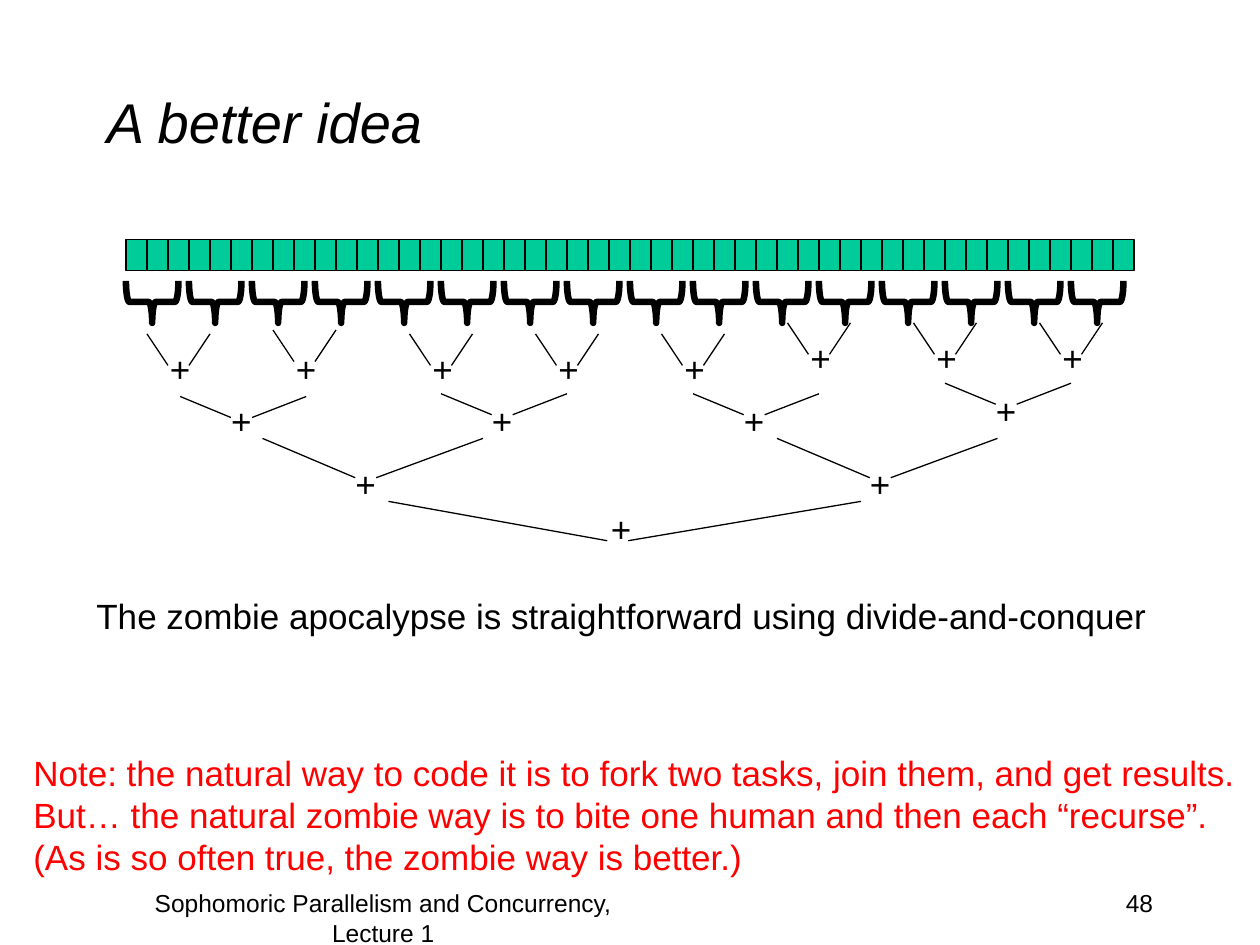
"""Build a slide showing a divide-and-conquer sum over an array."""
from lxml import etree
from pptx import Presentation
from pptx import util as u
from pptx.dml.color import RGBColor
from pptx.enum import shapes, text
from pptx.oxml import ns

Pt = u.Pt
COLORS = {"ink": "000000", "cell": "00CC99", "note": "FF0000"}
FONT = "Arial"
LEFT, CENTER, RIGHT = text.PP_ALIGN.LEFT, text.PP_ALIGN.CENTER, text.PP_ALIGN.RIGHT

TITLE = "A better idea"
BODY = "The zombie apocalypse is straightforward using divide-and-conquer"
FOOTER = "Sophomoric Parallelism and Concurrency, Lecture 1"
NUMBER = "48"
NOTE = (
    "Note: the natural way to code it is to fork two tasks, join them, and get results."
    "\vBut… the natural zombie way is to bite one human and then each “recurse”."
    "\n(As is so often true, the zombie way is better.)"
)

CELL_COUNT, BRACE_COUNT = 48, 16
CELL_LEFT, CELL_TOP, CELL_WIDTH, CELL_HEIGHT = 72, 136.8, 12, 18
BRACE_LEFT, BRACE_TOP, BRACE_WIDTH, BRACE_HEIGHT = 75, 157.5, 24, 30
BRACE_STEP = 3 * CELL_WIDTH
FOOT_GAP = 12
PLUS_WIDTH, PLUS_HEIGHT = 26, 31.5

LEVELS = [
    {"span": 36, "foot": 12, "rise": 18, "plus": 6, "joins": [
        (84, 190.8, 195), (156, 188.6, 195), (234, 190.8, 195), (306, 190.8, 195),
        (378, 190.8, 195), (450, 184.5, 188.6), (522, 184.5, 188.6), (594, 184.5, 188.6)]},
    {"span": 72, "foot": 29, "rise": 12, "plus": 22, "joins": [
        (103, 226.6, 225), (252, 225, 225), (396, 225, 225), (540, 219, 219)]},
    {"span": 126, "foot": 53, "rise": 22.5, "plus": 46, "joins": [
        (150, 250.5, 261), (444, 250.5, 261)]},
    {"span": 270, "foot": 125, "rise": 22.5, "plus": 120, "joins": [(222, 286.5, 286.5)]},
]


def color(name):
    return RGBColor.from_string(COLORS[name])


def add_text(page, words, left, top, width, height, size=20, ink="ink",
             align=LEFT, wrap=True, italic=False, middle=False):
    box = page.shapes.add_textbox(Pt(left), Pt(top), Pt(width), Pt(height))
    frame = box.text_frame
    frame.text = words
    frame.word_wrap = wrap
    frame.vertical_anchor = text.MSO_ANCHOR.MIDDLE if middle else text.MSO_ANCHOR.TOP
    for para in frame.paragraphs:
        para.alignment = align
        for span in para.runs:
            span.font.name, span.font.size = FONT, Pt(size)
            span.font.italic = italic
            span.font.color.rgb = color(ink)
    return box


def add_outline(page, kind, left, top, width, height, weight):
    shape = page.shapes.add_shape(kind, Pt(left), Pt(top), Pt(width), Pt(height))
    shape.shadow.inherit = False
    shape.fill.background()
    shape.line.color.rgb = color("ink")
    shape.line.width = Pt(weight)
    return shape


def add_line(page, x1, y1, x2, y2):
    line = page.shapes.add_connector(
        shapes.MSO_CONNECTOR.STRAIGHT, Pt(x1), Pt(y1), Pt(x2), Pt(y2))
    line.line.color.rgb = color("ink")
    line.line.width = Pt(0.75)
    etree.SubElement(line._element.spPr, ns.qn("a:effectLst"))


def add_array(page):
    for index in range(CELL_COUNT):
        cell = add_outline(page, shapes.MSO_SHAPE.RECTANGLE, CELL_LEFT + index * CELL_WIDTH,
                           CELL_TOP, CELL_WIDTH, CELL_HEIGHT, 0.75)
        cell.fill.solid()
        cell.fill.fore_color.rgb = color("cell")
    for index in range(BRACE_COUNT):
        brace = add_outline(page, shapes.MSO_SHAPE.LEFT_BRACE, BRACE_LEFT + index * BRACE_STEP,
                            BRACE_TOP, BRACE_WIDTH, BRACE_HEIGHT, 3.75)
        brace.rotation = 270


def add_tree(page):
    for level in LEVELS:
        for left, top, plus_top in level["joins"]:
            foot, bottom = left + level["foot"], top + level["rise"]
            add_line(page, left, top, foot, bottom)
            add_line(page, left + level["span"], top, foot + FOOT_GAP, bottom)
            add_text(page, "+", left + level["plus"], plus_top,
                     PLUS_WIDTH, PLUS_HEIGHT, wrap=False)


def main():
    deck = Presentation()
    deck.slide_width, deck.slide_height = Pt(720), Pt(540)
    page = deck.slides.add_slide(deck.slide_layouts[6])
    add_text(page, TITLE, 54, 24, 612, 90, size=32, italic=True, middle=True)
    body = add_text(page, BODY, 48, 336, 636, 66)
    para = body.text_frame.paragraphs[0]
    para.space_before = Pt(4)
    indent = para._p.get_or_add_pPr()
    indent.set("marL", str(Pt(27)))
    indent.set("indent", str(-Pt(27)))
    add_text(page, NUMBER, 516, 504, 150, 36, size=14, align=RIGHT)
    add_text(page, FOOTER, 60, 504, 318, 36, size=14, align=CENTER)
    add_array(page)
    add_tree(page)
    add_text(page, NOTE, 12, 426, 705.6, 80, ink="note", wrap=False)
    deck.save("out.pptx")


if __name__ == "__main__":
    main()
